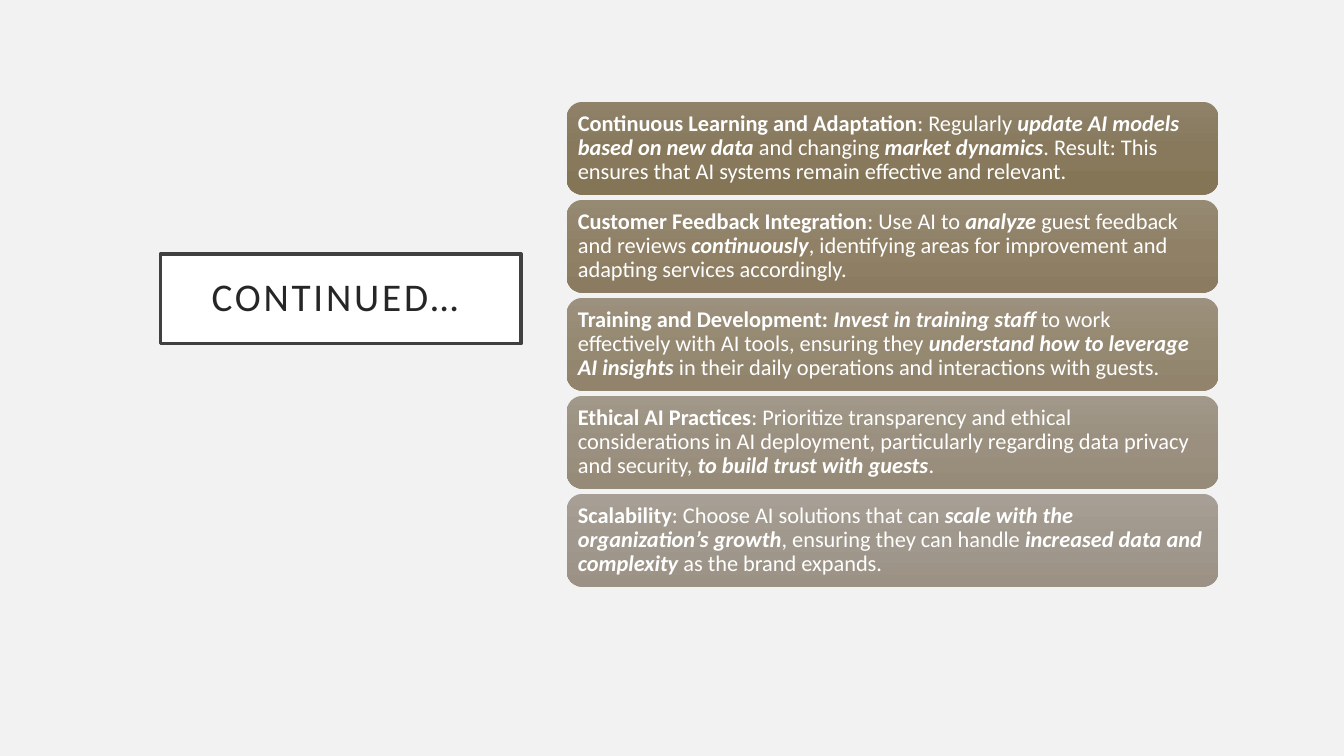
"""Build the "Continued" slide: a framed title beside five stacked practice cards."""
from copy import deepcopy

from pptx import Presentation
from pptx.dml.color import RGBColor
from pptx.enum.shapes import MSO_SHAPE
from pptx.enum.text import MSO_ANCHOR, MSO_AUTO_SIZE, PP_ALIGN
from pptx.oxml.ns import qn
from pptx.util import Pt

ROUNDED = MSO_SHAPE.ROUNDED_RECTANGLE
MIDDLE = MSO_ANCHOR.MIDDLE
NO_AUTOFIT = MSO_AUTO_SIZE.NONE
LEFT, CENTER = PP_ALIGN.LEFT, PP_ALIGN.CENTER

FONT = "Calibri"
TITLE = "CONTINUED… "
PLAIN, BOLD, STRONG = (False, False), (True, False), (True, True)

PRACTICES = [
    (("8F8269", "88795C", "847557"), [
        ("Continuous Learning and Adaptation", BOLD),
        (": Regularly ", PLAIN),
        ("update AI models based on new data", STRONG),
        (" and changing ", PLAIN),
        ("market dynamics", STRONG),
        (". Result: This ensures that AI systems remain effective and relevant.", PLAIN),
    ]),
    (("968A73", "908166", "8B7C61"), [
        ("Customer Feedback Integration", BOLD),
        (": Use AI to ", PLAIN),
        ("analyze ", STRONG),
        ("guest feedback and reviews ", PLAIN),
        ("continuously", STRONG),
        (", identifying areas for improvement and adapting services accordingly.", PLAIN),
    ]),
    (("9C917E", "968972", "91836C"), [
        ("Training and Development: ", BOLD),
        ("Invest in training staff", STRONG),
        (" to work effectively with AI tools, ensuring they ", PLAIN),
        ("understand how to leverage AI insights", STRONG),
        (" in their daily operations and interactions with guests.", PLAIN),
    ]),
    (("A19889", "9B907F", "968B79"), [
        ("Ethical AI Practices", BOLD),
        (": Prioritize transparency and ethical considerations in AI deployment, "
         "particularly regarding data privacy and security, ", PLAIN),
        ("to build trust with guests", STRONG),
        (".", PLAIN),
    ]),
    (("A79F95", "A0988C", "9B9285"), [
        ("Scalability", BOLD),
        (": Choose AI solutions that can ", PLAIN),
        ("scale with the organization’s growth", STRONG),
        (", ensuring they can handle ", PLAIN),
        ("increased data and complexity", STRONG),
        (" as the brand expands.", PLAIN),
    ]),
]

CARD_LEFT, CARD_TOP, CARD_WIDTH, CARD_HEIGHT = 404.8, 72.8, 465.6, 66.2
CARD_PITCH = 70


def color(value):
    return RGBColor.from_string(value)


def set_frame(frame, inset, alignment):
    frame.word_wrap = True
    frame.auto_size = NO_AUTOFIT
    frame.vertical_anchor = MIDDLE
    frame.margin_left = frame.margin_right = Pt(inset)
    frame.margin_top = frame.margin_bottom = Pt(inset)
    paragraph = frame.paragraphs[0]
    paragraph.alignment = alignment
    paragraph.line_spacing = 0.9
    return paragraph


def set_font(run, size, value):
    run.font.name = FONT
    run.font.size = Pt(size)
    run.font.color.rgb = color(value)


def set_gradient(shape, shades):
    shape.fill.gradient()
    shape.fill.gradient_angle = 270
    stop_list = shape.fill._xPr.find(qn("a:gradFill")).find(qn("a:gsLst"))
    stop_list.append(deepcopy(stop_list[0]))
    for index, (stop, shade) in enumerate(zip(shape.fill.gradient_stops, shades)):
        stop.position = index / 2
        stop.color.rgb = color(shade)


def add_title(slide):
    title = slide.shapes.title
    title.left, title.top, title.width, title.height = (
        Pt(114.5), Pt(181.4), Pt(257.8), Pt(64.1))
    title.fill.solid()
    title.fill.fore_color.rgb = color("FFFFFF")
    title.line.color.rgb = color("404040")
    title.line.width = Pt(2.5)
    title.text_frame.text = TITLE
    heading = set_frame(title.text_frame, 14.4, CENTER).runs[0]
    set_font(heading, 28, "262626")
    heading.font._element.set("spc", "200")


def add_card(slide, row, shades, phrases):
    card = slide.shapes.add_shape(
        ROUNDED, Pt(CARD_LEFT), Pt(CARD_TOP + row * CARD_PITCH),
        Pt(CARD_WIDTH), Pt(CARD_HEIGHT))
    card.shadow.inherit = False
    card.line.fill.background()
    set_gradient(card, shades)
    paragraph = set_frame(card.text_frame, 4.8, LEFT)
    for words, (bold, italic) in phrases:
        run = paragraph.add_run()
        run.text = words
        set_font(run, 16, "FFFFFF")
        run.font.bold, run.font.italic = bold, italic


def main():
    deck = Presentation()
    deck.slide_width, deck.slide_height = Pt(960), Pt(540)
    slide = deck.slides.add_slide(deck.slide_layouts[5])
    slide.background.fill.solid()
    slide.background.fill.fore_color.rgb = color("F2F2F2")
    add_title(slide)
    for row, (shades, phrases) in enumerate(PRACTICES):
        add_card(slide, row, shades, phrases)
    deck.save("out.pptx")


if __name__ == "__main__":
    main()
